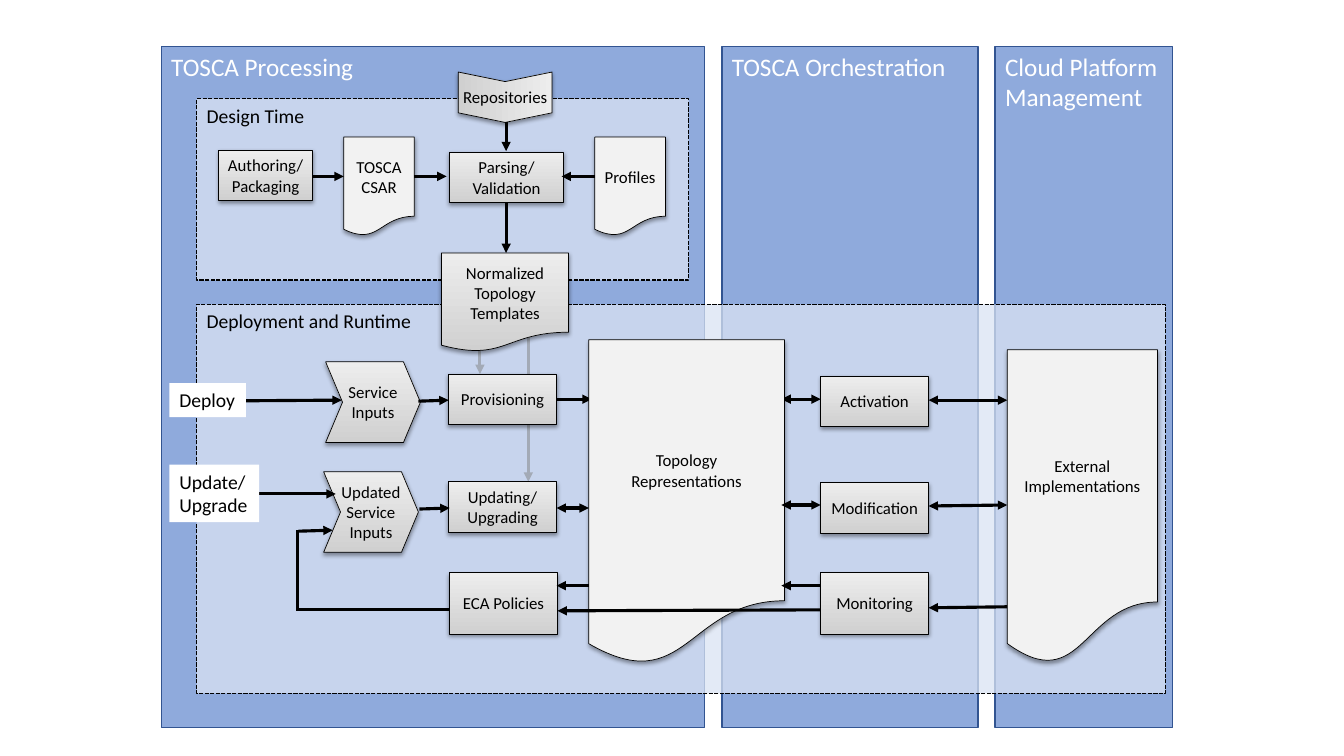
from lxml import etree
from pptx import Presentation
from pptx.dml.color import RGBColor
from pptx.enum.dml import MSO_LINE
from pptx.enum.shapes import MSO_CONNECTOR, MSO_SHAPE
from pptx.enum.text import MSO_ANCHOR, PP_ALIGN
from pptx.oxml.ns import qn
from pptx.util import Emu, Pt

PX = 9144  # EMU per px, 100 px to the inch
FONT = "Calibri"
BLACK = RGBColor(0x00, 0x00, 0x00)
WHITE = RGBColor(0xFF, 0xFF, 0xFF)
BAND_BLUE = RGBColor(0x8F, 0xAA, 0xDC)
BAND_EDGE = RGBColor(0x32, 0x54, 0x91)
PANEL_BLUE = RGBColor(0xDA, 0xE3, 0xF3)
PAPER = RGBColor(0xF2, 0xF2, 0xF2)
STEP_DARK = RGBColor(0xD0, 0xD0, 0xD0)
STEP_LIGHT = RGBColor(0xED, 0xED, 0xED)

RECT = MSO_SHAPE.RECTANGLE
DOCUMENT = MSO_SHAPE.FLOWCHART_DOCUMENT
CHEVRON = MSO_SHAPE.CHEVRON
STRAIGHT = MSO_CONNECTOR.STRAIGHT
DASH = MSO_LINE.SQUARE_DOT
LEFT, CENTER = PP_ALIGN.LEFT, PP_ALIGN.CENTER
TOP, MIDDLE = MSO_ANCHOR.TOP, MSO_ANCHOR.MIDDLE


def px(value):
    return Emu(round(value * PX))


def add_child(parent, tag, **attributes):
    return etree.SubElement(parent, qn(tag), attributes)


def write_text(shape, text, size, color, align=LEFT, anchor=TOP, wrap=True):
    frame = shape.text_frame
    frame.word_wrap = wrap
    frame.vertical_anchor = anchor
    for index, line in enumerate(text.split("\n")):
        paragraph = frame.add_paragraph() if index else frame.paragraphs[0]
        paragraph.alignment = align
        run = paragraph.add_run()
        run.text = line
        run.font.name = FONT
        run.font.size = Pt(size)
        run.font.color.rgb = color


def add_box(slide, origin, box, kind=RECT, fill=None, edge=None, weight=1):
    left, top, width, height = box
    shape = slide.shapes.add_shape(
        kind, px(origin[0] + left), px(origin[1] + top), px(width), px(height))
    shape.shadow.inherit = False
    if fill is not None:
        shape.fill.solid()
        shape.fill.fore_color.rgb = fill
    if edge is None:
        shape.line.fill.background()
    else:
        shape.line.color.rgb = edge
        shape.line.width = Pt(weight)
    return shape


def add_node(slide, origin, text, box, kind=RECT, fill=None):
    """Labelled step or document; without a fill it gets the grey gradient."""
    shape = add_box(slide, origin, box, kind, fill, BLACK, 0.5)
    if fill is None:
        shape.fill.gradient()
        shape.fill.gradient_angle = 90
        for stop, color in zip(shape.fill.gradient_stops, (STEP_DARK, STEP_LIGHT)):
            stop.color.rgb = color
    if kind == CHEVRON:
        shape.adjustments[0] = 0.21
    effects = shape._element.spPr.find(qn("a:effectLst"))
    shadow = add_child(effects, "a:outerShdw", blurRad="39370", dist="20320",
                       dir="5400000", rotWithShape="0")
    color = add_child(shadow, "a:srgbClr", val=str(BLACK))
    add_child(color, "a:alpha", val="38000")
    frame = shape.text_frame
    frame.margin_left = frame.margin_right = 0
    frame.margin_top = frame.margin_bottom = 0
    write_text(shape, text, 12, BLACK, CENTER, MIDDLE, wrap=False)
    return shape


def add_arrow(slide, origin, points, ends="end"):
    """Line through two points, with heads at "end", "both" or "none"."""
    x, y = origin
    x1, y1, x2, y2 = points
    arrow = slide.shapes.add_connector(
        STRAIGHT, px(x + x1), px(y + y1), px(x + x2), px(y + y2))
    arrow.line.color.rgb = BLACK
    arrow.line.width = Pt(2.25)
    outline = arrow.line._get_or_add_ln()
    if ends == "both":
        add_child(outline, "a:headEnd", type="triangle")
    if ends != "none":
        add_child(outline, "a:tailEnd", type="triangle")
    add_child(arrow._element.spPr, "a:effectLst")


def add_panel(slide, box, title):
    panel = add_box(slide, (0, 0), box, fill=PANEL_BLUE, edge=BLACK)
    panel.line.dash_style = DASH
    color = panel._element.spPr.find(qn("a:solidFill"))[0]
    add_child(color, "a:alpha", val="75000")
    write_text(panel, title, 14, BLACK)


def add_band(slide, box, title):
    band = add_box(slide, (0, 0), box, fill=BAND_BLUE, edge=BAND_EDGE)
    write_text(band, title, 18, WHITE)


def add_runtime(slide, box):
    origin = box[:2]

    # Template flows that show through the panel
    for points in ((329, 21, 329, 176), (281, 19, 281, 69)):
        add_arrow(slide, origin, points)
    add_panel(slide, box, "Deployment and Runtime")

    # Flows tucked under the topology document
    add_arrow(slide, origin, (357, 94, 392, 94))
    add_arrow(slide, origin, (619, 94, 580, 94), "both")

    # Steps, in two columns
    for text, left, top, height in (
            ("Provisioning", 250, 69, 50), ("Updating/\nUpgrading", 250, 176, 50),
            ("ECA Policies", 251, 266, 61), ("Activation", 619, 71, 50),
            ("Modification", 619, 177, 50), ("Monitoring", 619, 266, 61)):
        add_node(slide, origin, text, (left, top, 107, height))

    # Inputs and documents
    add_node(slide, origin, "Service\nInputs", (128, 57, 94, 80), CHEVRON)
    add_node(slide, origin, "Updated\nService\nInputs", (126, 166, 94, 80), CHEVRON)
    add_node(slide, origin, "Topology\nRepresentations", (389, 35, 194, 323),
             DOCUMENT, PAPER)
    add_node(slide, origin, "External\nImplementations", (804, 45, 149, 312),
             DOCUMENT, PAPER)

    # Flows
    flows = {
        "both": ((804, 95, 726, 95), (389, 202, 357, 202),
                 (619, 199, 580, 199), (804, 199, 726, 200)),
        "end": ((804, 300, 726, 301), (389, 279, 357, 279), (619, 303, 358, 304),
                (619, 279, 580, 279), (220, 96, 250, 95), (-10, 96, 144, 95),
                (221, 203, 251, 202), (-10, 188, 138, 188), (101, 225, 135, 224)),
        "none": ((250, 303, 100, 303), (100, 304, 100, 224)),
    }
    for ends, group in flows.items():
        for points in group:
            add_arrow(slide, origin, points, ends)

    # Triggers
    for text, label_box in (("Deploy", (-27, 78, 76, 34)),
                            ("Update/\nUpgrade", (-27, 159, 89, 57))):
        label = add_box(slide, origin, label_box, fill=WHITE)
        write_text(label, text, 14, BLACK, wrap=False)


def add_design_time(slide, box):
    origin = box[:2]
    add_panel(slide, box, "Design Time")

    # Steps and documents
    add_node(slide, origin, "Authoring/\nPackaging", (22, 51, 93, 50))
    add_node(slide, origin, "Parsing/\nValidation", (251, 53, 113, 50))
    add_node(slide, origin, "TOSCA\nCSAR", (146, 38, 70, 98), DOCUMENT, PAPER)
    add_node(slide, origin, "Profiles", (395, 38, 70, 98), DOCUMENT, PAPER)
    add_node(slide, origin, "Normalized\nTopology\nTemplates",
             (243, 153, 126, 98), DOCUMENT)

    # Downward chevron with upright text
    repositories = add_node(slide, origin, "Repositories", (281, -48, 50, 93), CHEVRON)
    repositories.rotation = 90
    repositories.adjustments[0] = 0.19
    repositories.text_frame._txBody.bodyPr.set("vert", "vert270")

    # Flows, each starting at the edge of its source
    for points in ((115, 77, 146, 77), (216, 77, 248, 77), (395, 77, 362, 77),
                   (307, 23, 307, 52), (307, 103, 307, 153)):
        add_arrow(slide, origin, points)


def main():
    presentation = Presentation()
    presentation.slide_width, presentation.slide_height = px(1333), px(750)
    slide = presentation.slides.add_slide(presentation.slide_layouts[6])
    for left, width, title in ((987, 176, "Cloud Platform Management"),
                               (716, 254, "TOSCA Orchestration"),
                               (160, 539, "TOSCA Processing")):
        add_band(slide, (left, 46, width, 676), title)
    add_runtime(slide, (195, 302, 961, 386))
    add_design_time(slide, (195, 98, 488, 180))
    presentation.save("out.pptx")


if __name__ == "__main__":
    main()
